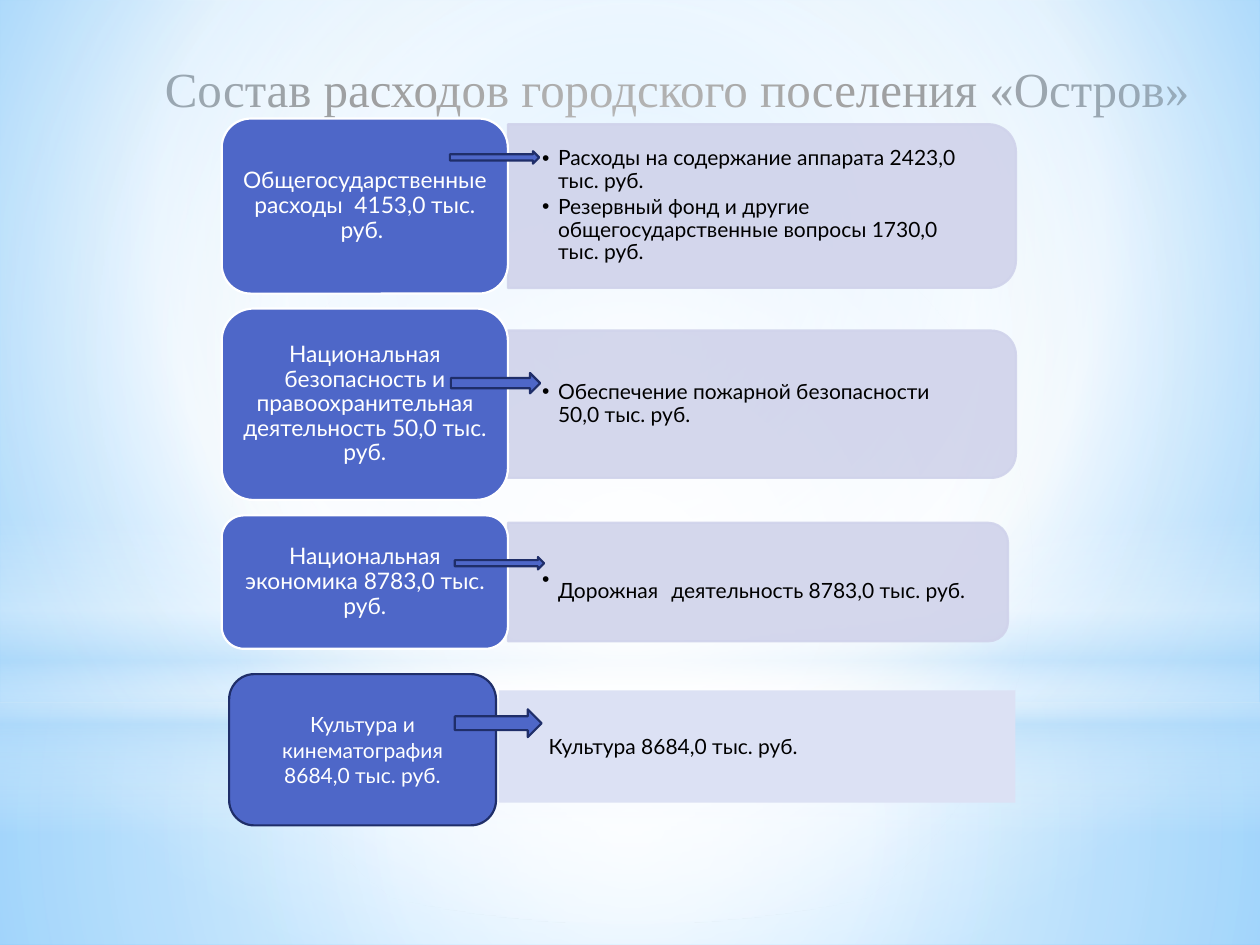
"""Build the slide on the spending of the town settlement."""
from lxml import etree
from pptx import Presentation, util as u
from pptx.dml.color import RGBColor
from pptx.enum import shapes as s, text as t
from pptx.oxml.ns import qn

Cm, Pt = u.Cm, u.Pt
hue = RGBColor.from_string
KIND = s.MSO_SHAPE
BLUE, NAVY, PALE, WHITE, BLACK = "4E67C8", "1F2E69", "D0D3EB", "FFFFFF", "000000"
SKY = "B4DCFA"


def box(kind, at, fill, line=None):
    shape = slide.shapes.add_shape(kind, *map(Cm, at))
    shape.shadow.inherit = False
    shape.fill.solid()
    shape.fill.fore_color.rgb = hue(fill)
    if line:
        shape.line.color.rgb = hue(line)
        shape.line.width = Pt(1.25)
    else:
        shape.line.fill.background()
    return shape


def write(shape, items, size, color, frame, para, font="Lato"):
    body = shape.text_frame
    form = {"word_wrap": True, "auto_size": t.MSO_AUTO_SIZE.NONE,
            "vertical_anchor": t.MSO_ANCHOR.MIDDLE, **frame}
    for key, val in form.items():
        setattr(body, key, val)
    for i, runs in enumerate(items):
        p = body.paragraphs[0] if i == 0 else body.add_paragraph()
        for key, val in {"space_before": Pt(0), **para}.items():
            setattr(p, key, val)
        for words, big in runs:
            run = p.add_run()
            run.text = words
            look = {"name": font, "size": Pt(big or size), "bold": False}
            for key, val in look.items():
                setattr(run.font, key, val)
            run.font.color.rgb = hue(color)


deck = Presentation()
deck.slide_width, deck.slide_height = Cm(25.4), Cm(19.05)
slide = deck.slides.add_slide(deck.slide_layouts[4])
hold = {h.placeholder_format.idx: h for h in slide.placeholders}
hold[3].element.getparent().remove(hold[3].element)

MID = (50, 50, 50, 50)
washes = [
    (None, None, [(0, "9ED5FF", 100), (60, WHITE, 100), (100, "5BB9FF", 100)],
     (20, 10, 20, 60)),
    (KIND.RECTANGLE, (0, 14.17, 25.4, 4.88),
     [(0, WHITE, 91), (37, WHITE, 76), (100, SKY, 79)], MID),
    (KIND.RECTANGLE, (0, 0, 25.4, 14.17),
     [(0, WHITE, 89), (48, WHITE, 62), (100, SKY, 79)], MID),
    (KIND.RECTANGLE, (0, 10.46, 25.4, 6.35),
     [(0, WHITE, 0), (29, WHITE, 30), (45, SKY, 40), (55, WHITE, 26),
      (65, SKY, 60), (100, WHITE, 0)], None),
    (KIND.OVAL, (0, 4.45, 25.4, 14.17), [(0, WHITE, 100), (56, WHITE, 0)], MID),
]
for kind, at, stops, focus in washes:
    if kind is None:
        slide.background.fill.gradient()
        grad = slide.element.find(".//" + qn("a:gradFill"))
    else:
        wash = box(kind, at, WHITE)
        wash.fill.gradient()
        grad = wash.element.spPr.find(qn("a:gradFill"))
    for node in list(grad):
        grad.remove(node)
    row = etree.SubElement(grad, qn("a:gsLst"))
    for pos, color, alpha in stops:
        stop = etree.SubElement(row, qn("a:gs"), pos=str(pos * 1000))
        tint = etree.SubElement(stop, qn("a:srgbClr"), val=color)
        if alpha < 100:
            etree.SubElement(tint, qn("a:alpha"), val=str(alpha * 1000))
    if focus:
        way = etree.SubElement(grad, qn("a:path"), path="circle")
        sides = {k: str(v * 1000) for k, v in zip("ltrb", focus)}
        etree.SubElement(way, qn("a:fillToRect"), **sides)
    else:
        etree.SubElement(grad, qn("a:lin"), ang="5400000", scaled="0")

MID_P = {"alignment": t.PP_ALIGN.CENTER}
head = slide.shapes.title
head.left, head.top, head.width, head.height = map(Cm, (1.9, 1.04, 23.5, 1.45))
write(head, [[("Состав расходов городского поселения «Остров»", None)]], 28, BLACK,
      {}, MID_P, "Times New Roman")

rows = [
    (2.39, 3.53, 3.3, 10.24, 1, "Общегосударственные расходы  4153,0 тыс. руб. ",
     [[("Расходы на содержание аппарата 2423,0 тыс. руб.", None)],
      [("Резервный фонд и другие общегосударственные вопросы 1730,0 тыс. руб.", None)]]),
    (6.22, 3.86, 2.97, 10.24, 2, "Национальная безопасность и правоохранительная "
     "деятельность 50,0 тыс. руб.",
     [[("Обеспечение пожарной безопасности 50,0 тыс. руб.", None)]]),
    (10.39, 2.69, 2.39, 10.08, 4, "Национальная экономика 8783,0 тыс. руб.",
     [[("Дорожная", None), (" ", 29), ("деятельность 8783,0 тыс. руб.", None)]]),
]
left, wide = 4.47, 5.77
edge = left + wide
for top, high, deep, span, idx, name, items in rows:
    mid = top + high / 2
    panel = box(KIND.ROUND_2_SAME_RECTANGLE,
                (edge + (span - deep) / 2, mid - span / 2, deep, span), PALE, PALE)
    panel.rotation = 90
    for tint in panel.element.spPr.iter(qn("a:srgbClr")):
        etree.SubElement(tint, qn("a:alpha"), val="90000")

    part = hold[idx]
    at = (edge, mid - deep / 2, span - 0.14, deep)
    part.left, part.top, part.width, part.height = map(Cm, at)
    write(part, items, 12, BLACK,
          {"margin_left": Cm(0.69), "margin_right": Cm(0.69),
           "margin_top": Cm(0.36), "margin_bottom": Cm(0.36)},
          {"line_spacing": 0.9, "space_after": Pt(1.8)})
    for p in part.text_frame.paragraphs:
        prop = p._p.get_or_add_pPr()
        prop.set("marL", str(Cm(0.32)))
        prop.set("indent", str(-Cm(0.32)))
        etree.SubElement(prop, qn("a:buChar"), char="•")
    slide.shapes._spTree.append(part.element)

    block = box(KIND.ROUNDED_RECTANGLE, (left, top, wide, high), BLUE, WHITE)
    write(block, [[(name, None)]], 13, WHITE,
          {"margin_left": Cm(0.13), "margin_right": Cm(0.13),
           "margin_top": Cm(0.08), "margin_bottom": Cm(0.08)},
          {**MID_P, "line_spacing": 0.9})

block = box(KIND.ROUNDED_RECTANGLE, (4.62, 13.59, 5.38, 3.05), BLUE, NAVY)
write(block, [[("Культура и кинематография 8684,0 тыс. руб.", None)]], 12, WHITE,
      {}, MID_P)
panel = box(KIND.RECTANGLE, (10.06, 13.92, 10.41, 2.26), "DCE1F4")
write(panel, [[("Культура 8684,0 тыс. руб.", None)]], 12, BLACK,
      {"margin_left": Cm(1)}, {"alignment": t.PP_ALIGN.LEFT})

for at in [(9.07, 3.05, 1.8, 0.25), (9.09, 7.52, 1.8, 0.41),
           (9.17, 11.23, 1.8, 0.25), (9.17, 14.3, 1.75, 0.56)]:
    box(KIND.RIGHT_ARROW, at, BLUE, NAVY)

deck.save("out.pptx")
